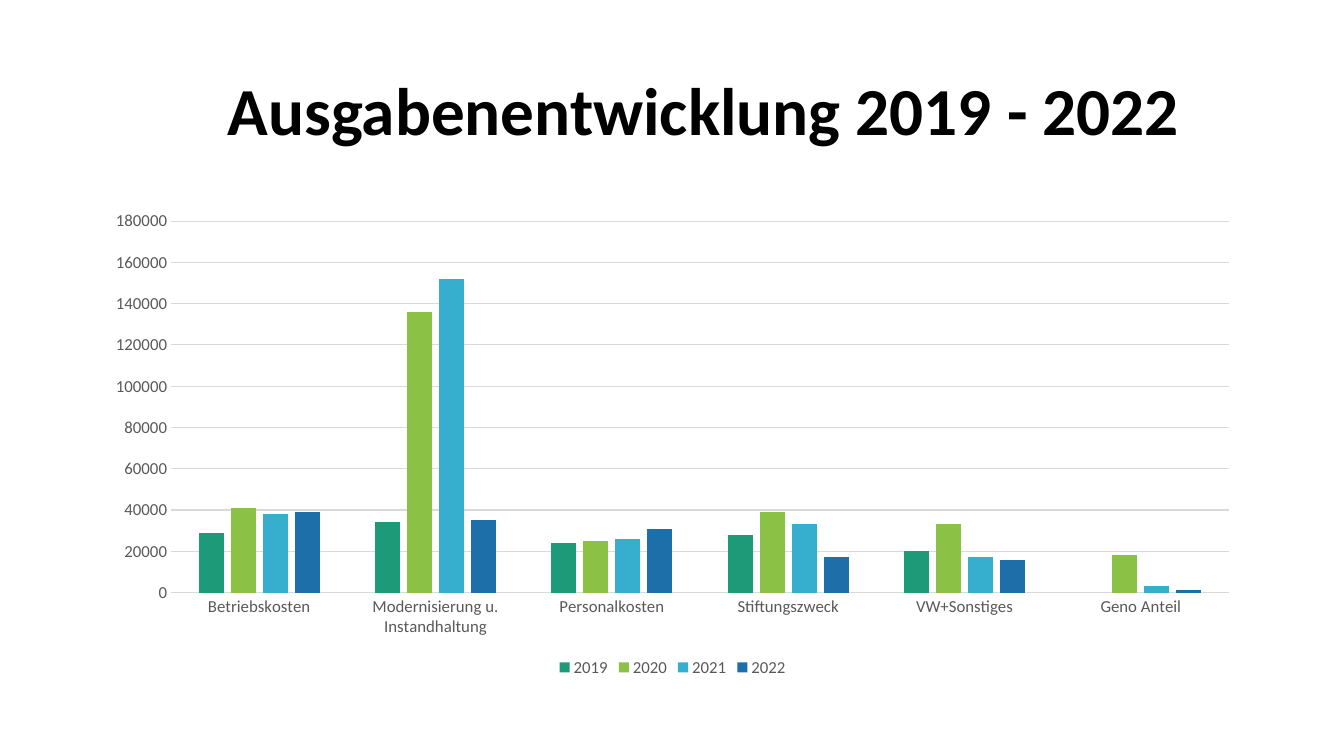
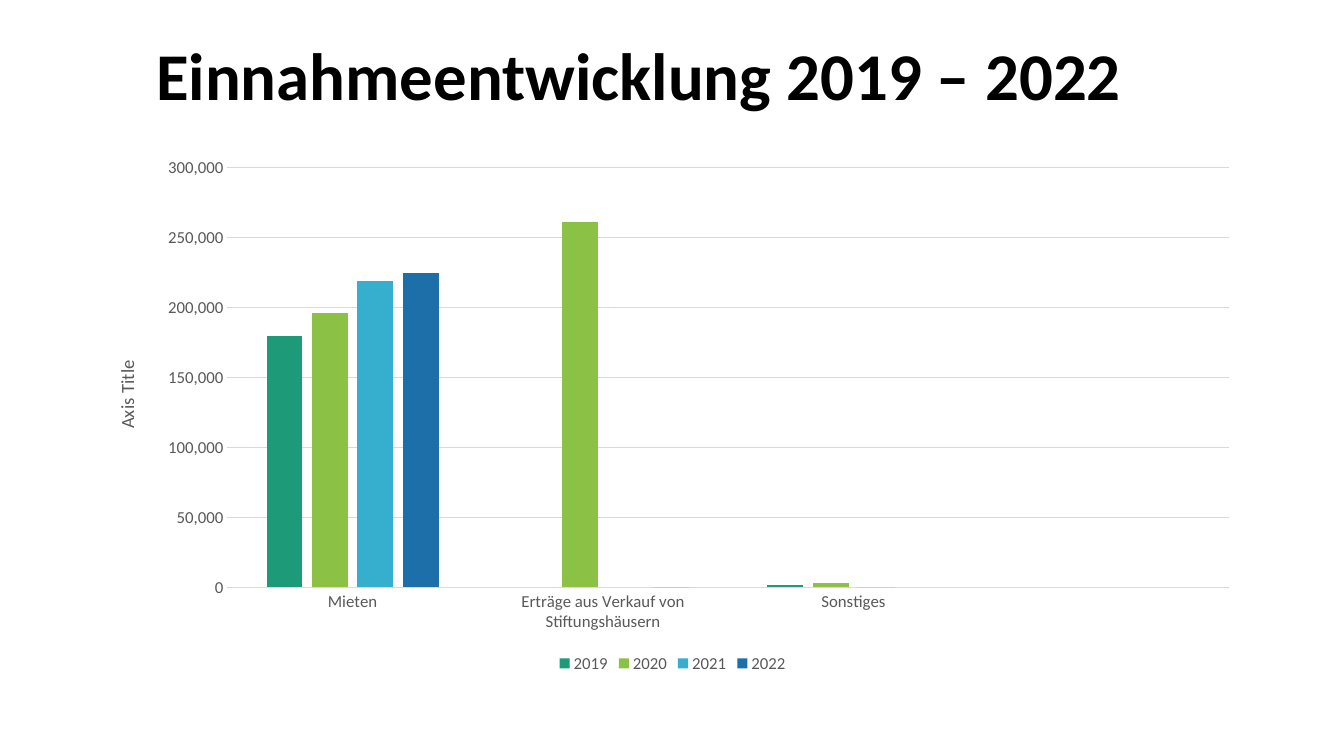
from dataclasses import dataclass
from typing import Any

from pptx import Presentation
from pptx.chart.data import CategoryChartData as Data
from pptx.dml.color import RGBColor
from pptx.enum.chart import XL_CHART_TYPE as Kind, XL_LEGEND_POSITION as Spot, XL_TICK_MARK as Tick
from pptx.enum.text import MSO_ANCHOR as Anchor, MSO_AUTO_SIZE as Fit, PP_ALIGN as Align
from pptx.util import Inches, Pt

FACE = "Calibri"
BLACK, GREY, RULE = "000000", "595959", "D9D9D9"
YEARS = {"2019": "1D9A78", "2020": "8BC145", "2021": "36AFCE", "2022": "1D6FA9"}
LEFT, RIGHT = 0.92, 12.42

LABEL = {"name": FACE, "size": Pt(12)}
HEAD = {"name": FACE, "bold": True}
FRAME = {"vertical_anchor": Anchor.MIDDLE, "auto_size": Fit.NONE, "word_wrap": True}
PARA = {"alignment": Align.LEFT, "line_spacing": 0.9}
AXIS = {"major_tick_mark": Tick.NONE, "minor_tick_mark": Tick.NONE}


@dataclass
class Title:
    text: str
    left: float
    top: float
    height: float
    size: float


@dataclass
class Graph:
    top: float
    height: float
    cats: list[str]
    rows: list[list[int | None]]
    peak: int
    step: int
    code: str
    note: str = ""


def apply(item: Any, form: dict[str, Any]) -> None:
    for key, value in form.items():
        setattr(item, key, value)


def paint(color: Any, code: str) -> None:
    color.rgb = RGBColor.from_string(code)


def style(font: Any, form: dict[str, Any], code: str) -> None:
    apply(font, form)
    paint(font.color, code)


def stroke(line: Any) -> None:
    line.width = Pt(0.75)
    paint(line.color, RULE)


def add_title(slide: Any, title: Title) -> None:
    box = slide.shapes.title
    apply(box, {"left": Inches(title.left), "top": Inches(title.top),
                "width": Inches(RIGHT - title.left), "height": Inches(title.height)})
    frame = box.text_frame
    frame.text = title.text
    apply(frame, FRAME)
    para = frame.paragraphs[0]
    apply(para, PARA)
    style(para.runs[0].font, HEAD | {"size": Pt(title.size)}, BLACK)


def add_note(axis: Any, text: str) -> None:
    frame = axis.axis_title.text_frame
    frame.text = text
    body = frame._txBody.bodyPr
    body.set("rot", "-5400000")
    body.set("vert", "horz")
    form = LABEL | {"size": Pt(13.3), "bold": False}
    style(frame.paragraphs[0].runs[0].font, form, GREY)


def add_graph(slide: Any, graph: Graph) -> None:
    data = Data(number_format=graph.code)
    data.categories = graph.cats
    for year, row in zip(YEARS, graph.rows):
        data.add_series(year, row)
    chart = slide.shapes.add_chart(
        Kind.COLUMN_CLUSTERED, Inches(LEFT), Inches(graph.top),
        Inches(RIGHT - LEFT), Inches(graph.height), data).chart
    apply(chart, {"has_title": False, "has_legend": True})
    style(chart.font, LABEL | {"size": Pt(10)}, BLACK)
    apply(chart.legend, {"position": Spot.BOTTOM, "include_in_layout": False})
    style(chart.legend.font, LABEL, GREY)

    plot = chart.plots[0]
    apply(plot, {"gap_width": 219, "overlap": -27, "vary_by_categories": False})
    for bars, code in zip(plot.series, YEARS.values()):
        bars.format.fill.solid()
        paint(bars.format.fill.fore_color, code)

    base, scale = chart.category_axis, chart.value_axis
    for axis in (base, scale):
        apply(axis, AXIS)
        style(axis.tick_labels.font, LABEL, GREY)
    stroke(base.format.line)
    scale.format.line.fill.background()
    apply(scale, {"minimum_scale": 0, "maximum_scale": graph.peak,
                  "major_unit": graph.step, "has_major_gridlines": True})
    stroke(scale.major_gridlines.format.line)
    apply(scale.tick_labels, {"number_format": graph.code, "number_format_is_linked": False})
    if graph.note:
        add_note(scale, graph.note)


PAGES = [
    (
        Title("Ausgabenentwicklung 2019 - 2022", 2.16, 0.4, 1.45, 48),
        Graph(2, 4.76,
              ["Betriebskosten", "Modernisierung u. Instandhaltung", "Personalkosten",
               "Stiftungszweck", "VW+Sonstiges", "Geno Anteil"],
              [[29000, 34000, 24000, 28000, 20000, None],
               [41000, 136000, 25000, 39000, 33000, 18000],
               [38000, 152000, 26000, 33000, 17000, 3000],
               [39000, 35000, 31000, 17000, 16000, 1000]],
              180000, 20000, "General"),
    ),
    (
        Title("Einnahmeentwicklung 2019 – 2022", 1.45, 0.3, 0.97, 47.7),
        Graph(1.46, 5.26,
              ["Mieten", "Erträge aus Verkauf von Stiftungshäusern", "Sonstiges", ""],
              [[180000, None, 2000, None],
               [196000, 261000, 3000, None],
               [219000, None, 0, None],
               [225000, 0, None, None]],
              300000, 50000, "#,##0", "Axis Title"),
    ),
]


def main() -> None:
    deck = Presentation()
    apply(deck, {"slide_width": Inches(13.33), "slide_height": Inches(7.5)})
    for title, graph in PAGES:
        slide = deck.slides.add_slide(deck.slide_layouts[5])
        add_title(slide, title)
        add_graph(slide, graph)
    deck.save("out.pptx")


if __name__ == "__main__":
    main()
